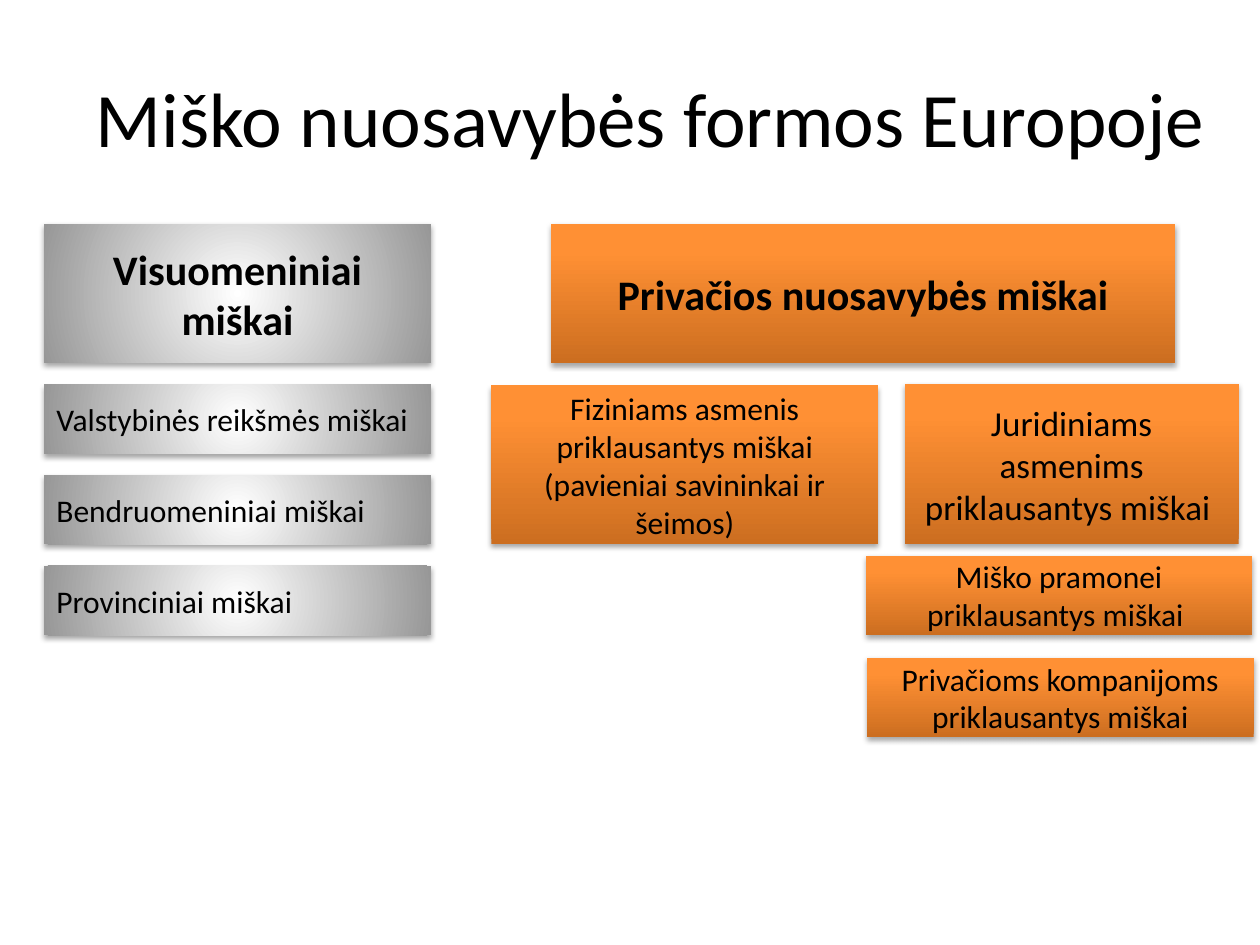
from dataclasses import dataclass

from lxml.etree import SubElement
from pptx import Presentation
from pptx.dml.color import RGBColor
from pptx.enum.shapes import MSO_SHAPE as Preset
from pptx.enum.text import MSO_ANCHOR as Anchor, PP_ALIGN as Align
from pptx.oxml.ns import qn
from pptx.util import Inches, Pt


@dataclass(frozen=True)
class Theme:
    """Hold the colours, gradients and type sizes."""

    font: str = "Calibri"
    ink: str = "000000"
    silver: tuple = ((0, "FFFFFF"), (100, "979797"))
    orange: tuple = ((0, "CC6E20"), (80, "FF9034"), (100, "FF9136"))
    title: int = 44
    heading: int = 24
    subheading: int = 20
    body: int = 18


class ForestSlide:
    """Draw the elements of the ownership slide in one style."""

    def __init__(self, page, theme):
        """Keep the slide and its theme."""
        self.page = page
        self.theme = theme

    def add_text(self, frame, text, size, align, bold=False):
        """Fill a text frame with one styled paragraph."""
        frame.word_wrap = True
        frame.vertical_anchor = Anchor.MIDDLE
        para = frame.paragraphs[0]
        para.alignment = align
        span = para.add_run()
        span.text = text
        span.font.name = self.theme.font
        span.font.size = Pt(size)
        span.font.bold = bold
        span.font.color.rgb = RGBColor.from_string(self.theme.ink)

    def title(self, text, left, top, width, height):
        """Place and fill the title placeholder."""
        box = self.page.shapes.title
        box.left, box.top = Inches(left), Inches(top)
        box.width, box.height = Inches(width), Inches(height)
        self.add_text(box.text_frame, text, self.theme.title, Align.CENTER)

    def gradient(self, box, stops):
        """Give a box a radial silver or upward linear gradient."""
        box.fill.background()
        properties = box._element.spPr
        empty = properties.find(qn("a:noFill"))
        fill = SubElement(properties, qn("a:gradFill"), rotWithShape="1")
        properties.replace(empty, fill)
        stop_list = SubElement(fill, qn("a:gsLst"))
        for position, colour in stops:
            stop = SubElement(stop_list, qn("a:gs"), pos=str(position * 1000))
            SubElement(stop, qn("a:srgbClr"), val=colour)
        if stops is self.theme.silver:
            centre = SubElement(fill, qn("a:path"), path="circle")
            sides = dict.fromkeys("ltrb", "50000")
            SubElement(centre, qn("a:fillToRect"), **sides)
        else:
            SubElement(fill, qn("a:lin"), ang="16200000", scaled="0")

    def shadow(self, box):
        """Give a box a soft shadow below it."""
        box.shadow.inherit = False
        effects = box._element.spPr.find(qn("a:effectLst"))
        outer = SubElement(
            effects, qn("a:outerShdw"), blurRad=str(Pt(3.1)), dist=str(Pt(1.8)),
            dir="5400000", rotWithShape="0")
        colour = SubElement(outer, qn("a:srgbClr"), val=self.theme.ink)
        SubElement(colour, qn("a:alpha"), val="35000")

    def card(self, text, place, stops, size, align=Align.CENTER, bold=False):
        """Add a shaded rectangle with text."""
        box = self.page.shapes.add_shape(
            Preset.RECTANGLE, *(Inches(length) for length in place))
        box.line.fill.background()
        self.gradient(box, stops)
        self.shadow(box)
        self.add_text(box.text_frame, text, size, align, bold)


def main():
    """Build and save the deck."""
    deck = Presentation()
    deck.slide_width, deck.slide_height = Inches(10), Inches(7.5)
    theme = Theme()
    slide = ForestSlide(deck.slides.add_slide(deck.slide_layouts[5]), theme)
    slide.title("Miško nuosavybės formos Europoje", 0.5, 0.3, 9.33, 1.25)

    left, width = 0.35, 3.07
    slide.card("Visuomeniniai miškai", (left, 1.78, width, 1.1),
               theme.silver, theme.heading, bold=True)
    public_forests = ("Valstybinės reikšmės miškai", "Bendruomeniniai miškai",
                      "Provinciniai miškai")
    for row, text in enumerate(public_forests):
        slide.card(text, (left, 3.05 + row * 0.72, width, 0.55),
                   theme.silver, theme.body, Align.LEFT)

    slide.card("Privačios nuosavybės miškai", (4.37, 1.78, 4.96, 1.1),
               theme.orange, theme.heading, bold=True)
    private_forests = (
        ("Fiziniams asmenis priklausantys miškai (pavieniai savininkai ir šeimos)",
         (3.9, 3.06, width, 1.26), theme.body),
        ("Juridiniams asmenims priklausantys miškai ",
         (7.18, 3.05, 2.65, 1.27), theme.subheading),
        ("Miško pramonei priklausantys miškai ",
         (6.87, 4.41, width, 0.63), theme.body),
        ("Privačioms kompanijoms priklausantys miškai",
         (6.88, 5.22, width, 0.63), theme.body),
    )
    for text, place, size in private_forests:
        slide.card(text, place, theme.orange, size)

    deck.save("out.pptx")


if __name__ == "__main__":
    main()
